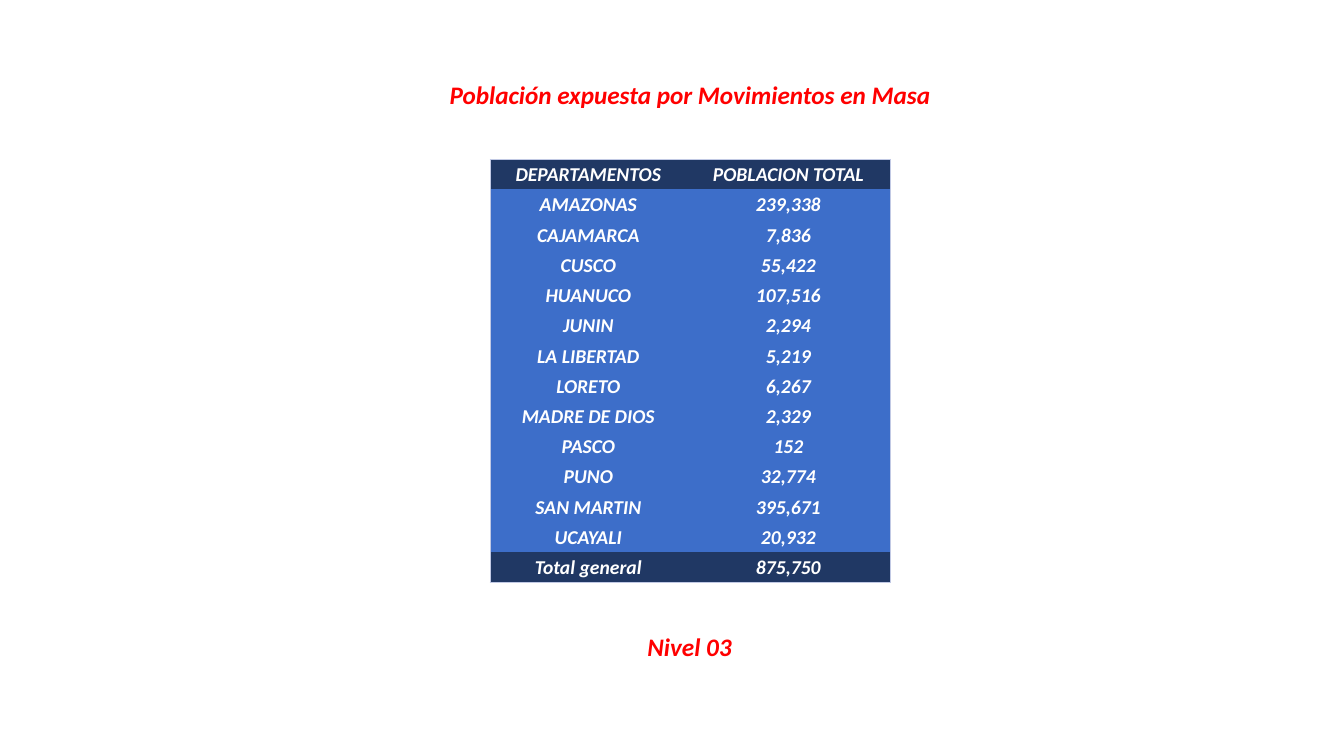
from dataclasses import dataclass

from lxml import etree
from pptx import Presentation
from pptx.dml.color import RGBColor
from pptx.enum.text import MSO_ANCHOR, MSO_AUTO_SIZE, PP_ALIGN
from pptx.oxml.ns import qn
from pptx.util import Inches, Pt

CENTER = PP_ALIGN.CENTER
MIDDLE = MSO_ANCHOR.MIDDLE
FIT_SHAPE = MSO_AUTO_SIZE.SHAPE_TO_FIT_TEXT
NO_STYLE = "{2D5ABB26-0587-4C30-8999-92F81FD0307C}"


@dataclass(frozen=True)
class Theme:
    font: str = "Calibri"
    caption: str = "FF0000"
    cell_text: str = "FFFFFF"
    band: str = "203864"
    body: str = "3D6EC9"
    border: str = "C1C9E4"
    caption_size: int = 18
    cell_size: int = 14
    border_width: float = 0.5


@dataclass(frozen=True)
class Caption:
    text: str
    left: float
    top: float
    width: float
    height: float
    wrap: bool


@dataclass(frozen=True)
class Row:
    department: str
    population: str
    band: bool = False


THEME = Theme()
CAPTIONS = [
    Caption("Población expuesta por Movimientos en Masa", 4.33, 0.74, 5.03, 0.4, False),
    Caption("Nivel 03", 6.29, 6.21, 1.1, 0.4, True),
]
ROWS = [
    Row("DEPARTAMENTOS", "POBLACION TOTAL", True),
    Row("AMAZONAS", "239,338"),
    Row("CAJAMARCA", "7,836"),
    Row("CUSCO", "55,422"),
    Row("HUANUCO", "107,516"),
    Row("JUNIN", "2,294"),
    Row("LA LIBERTAD", "5,219"),
    Row("LORETO", "6,267"),
    Row("MADRE DE DIOS", "2,329"),
    Row("PASCO", "152"),
    Row("PUNO", "32,774"),
    Row("SAN MARTIN", "395,671"),
    Row("UCAYALI", "20,932"),
    Row("Total general", "875,750", True),
]
TABLE_LEFT, TABLE_TOP = 4.86, 1.58
COL_WIDTHS = (1.95, 2.02)
ROW_HEIGHT = 0.3


def add_text(tf, text: str, size: int, color: str) -> None:
    p = tf.paragraphs[0]
    p.alignment = CENTER
    r = p.add_run()
    r.text = text
    r.font.name = THEME.font
    r.font.size = Pt(size)
    r.font.bold = r.font.italic = True
    r.font.color.rgb = RGBColor.from_string(color)


def add_caption(s, caption: Caption) -> None:
    box = s.shapes.add_textbox(Inches(caption.left), Inches(caption.top),
                               Inches(caption.width), Inches(caption.height))
    tf = box.text_frame
    tf.word_wrap = caption.wrap
    tf.auto_size = FIT_SHAPE
    add_text(tf, caption.text, THEME.caption_size, THEME.caption)


def add_border(cell, side: str) -> None:
    tc_pr = cell._tc.get_or_add_tcPr()
    line = etree.SubElement(tc_pr, qn(f"a:ln{side}"), w=str(Pt(THEME.border_width)))
    fill = etree.SubElement(line, qn("a:solidFill"))
    etree.SubElement(fill, qn("a:srgbClr"), val=THEME.border)


def fill_cell(cell, text: str, color: str, sides: list[str]) -> None:
    cell.vertical_anchor = MIDDLE
    cell.margin_left = cell.margin_top = cell.margin_right = Inches(0.01)
    cell.margin_bottom = 0
    for side in sides:
        add_border(cell, side)
    cell.fill.solid()
    cell.fill.fore_color.rgb = RGBColor.from_string(color)
    add_text(cell.text_frame, text, THEME.cell_size, THEME.cell_text)


def add_population_table(s, rows: list[Row]) -> None:
    frame = s.shapes.add_table(len(rows), len(COL_WIDTHS),
                               Inches(TABLE_LEFT), Inches(TABLE_TOP),
                               Inches(sum(COL_WIDTHS)), Inches(ROW_HEIGHT * len(rows)))
    table = frame.table
    table._tbl.tblPr.find(qn("a:tableStyleId")).text = NO_STYLE
    for column, width in zip(table.columns, COL_WIDTHS):
        column.width = Inches(width)
    for i, row in enumerate(rows):
        table.rows[i].height = Inches(ROW_HEIGHT)
        color = THEME.band if row.band else THEME.body
        for j, text in enumerate((row.department, row.population)):
            # Only the outer edge of the table is outlined
            sides = ["L" if j == 0 else "R"]
            if i == 0:
                sides.append("T")
            if i == len(rows) - 1:
                sides.append("B")
            fill_cell(table.cell(i, j), text, color, sides)


def main() -> None:
    prs = Presentation()
    prs.slide_width, prs.slide_height = Inches(13.33), Inches(7.5)
    s = prs.slides.add_slide(prs.slide_layouts[6])

    # Title and level captions
    for caption in CAPTIONS:
        add_caption(s, caption)

    # Population by department
    add_population_table(s, ROWS)

    prs.save("out.pptx")


if __name__ == "__main__":
    main()
